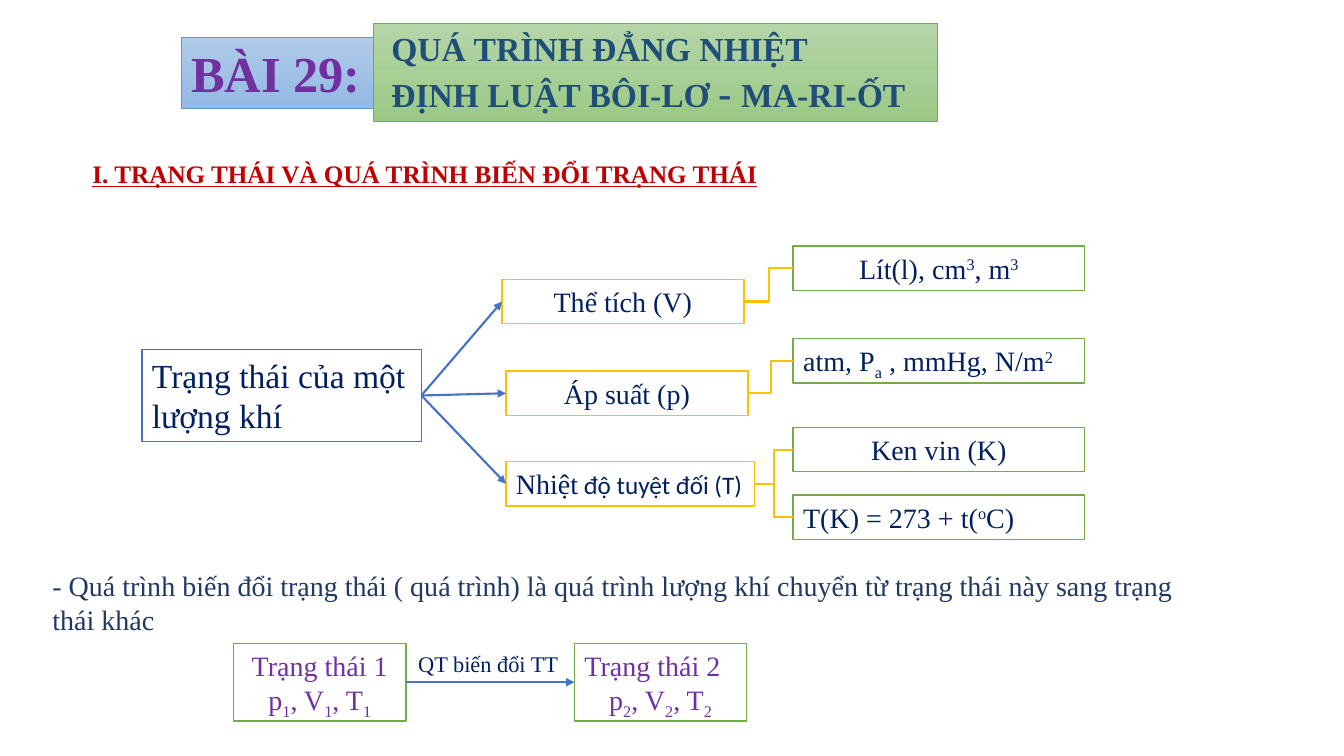
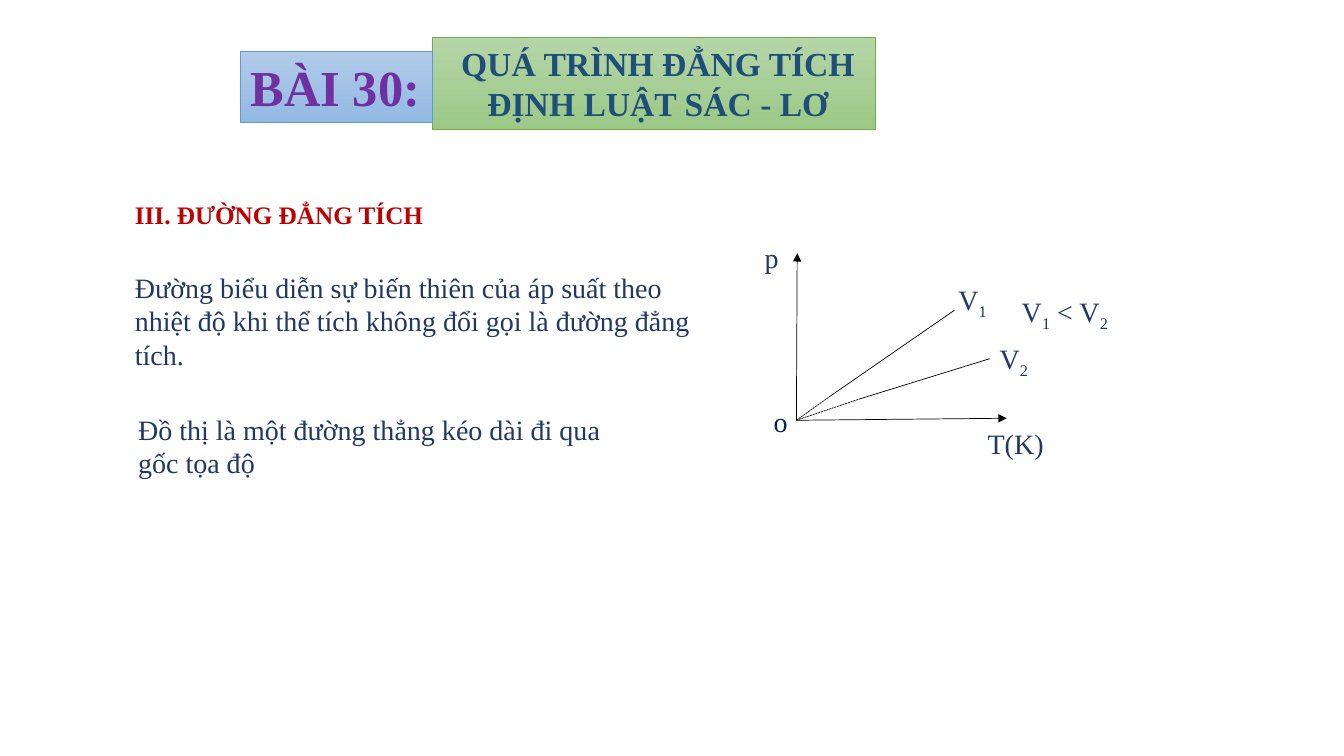
from lxml.etree import SubElement
from pptx import Presentation
from pptx.dml.color import RGBColor
from pptx.enum.dml import MSO_LINE
from pptx.enum.shapes import MSO_CONNECTOR as CONNECTOR, MSO_SHAPE as SHAPE
from pptx.enum.text import MSO_ANCHOR as ANCHOR, MSO_AUTO_SIZE as AUTO_SIZE, PP_ALIGN as ALIGN
from pptx.oxml.ns import qn
from pptx.util import Cm, Pt

NAVY, DARK_BLUE, PURPLE, RED = "002060", "203864", "7030A0", "C00000"
BLUE, GOLD, GREEN, BLACK, WHITE = "4472C4", "FFC000", "70AD47", "000000", "FFFFFF"
TOP, LEFT, BOTTOM, RIGHT = range(4)
ALIGNMENTS = {"l": ALIGN.LEFT, "c": ALIGN.CENTER}
BASELINES = {"_": "-25000", "^": "30000"}


def color(hex_string):
    return RGBColor.from_string(hex_string)


def split_scripts(text):
    """Yield (text, marker); "_" lowers and "^" raises the next character."""
    first, *others = text.replace("_", "|_").replace("^", "|^").split("|")
    yield first, None
    for part in others:
        yield part[1], part[0]
        yield part[2:], None


class Lesson:
    """Holds the style of the lesson and the slide being built."""

    BODY = {"name": "Times New Roman", "size": Pt(20), "bold": False, "underline": False}
    TITLE = {"size": Pt(24), "bold": True}
    BADGE = {"size": Pt(36), "bold": True}
    SECTION = {"size": Pt(18), "bold": True}
    BADGE_WIDTH, BADGE_HEIGHT, BADGE_DROP = 4.83, 1.8, 0.35

    def __init__(self):
        self.presentation = Presentation()
        self.presentation.slide_width = Cm(33.87)
        self.presentation.slide_height = Cm(19.05)
        self.slide = None

    def new_slide(self):
        self.slide = self.presentation.slides.add_slide(self.presentation.slide_layouts[5])

    def set_text(self, shape, paragraphs, ink, align="l", wrap=True, **changes):
        """Fill the shape; a paragraph is a string or a list of (text, changes)."""
        frame = shape.text_frame
        values = {"word_wrap": wrap, "auto_size": AUTO_SIZE.NONE, "vertical_anchor": ANCHOR.TOP,
                  "margin_left": Cm(0.25), "margin_right": Cm(0.25),
                  "margin_top": Cm(0.13), "margin_bottom": Cm(0.13)}
        for name, value in values.items():
            setattr(frame, name, value)
        for index, content in enumerate(paragraphs):
            paragraph = frame.add_paragraph() if index else frame.paragraphs[0]
            paragraph.alignment = ALIGNMENTS[align[min(index, len(align) - 1)]]
            paragraph.line_spacing = 1.0
            paragraph.space_before = Pt(0)
            pieces = [(content, {})] if isinstance(content, str) else content
            for text, piece_changes in pieces:
                for part, marker in split_scripts(text):
                    if part:
                        self.add_run(paragraph, part, marker, ink, {**changes, **piece_changes})

    def add_run(self, paragraph, text, marker, ink, changes):
        run = paragraph.add_run()
        run.text = text
        for name, value in {**self.BODY, **changes}.items():
            setattr(run.font, name, value)
        run.font.color.rgb = color(ink)
        if marker:
            run.font._element.set("baseline", BASELINES[marker])

    def outline(self, shape, line_color, width):
        shape.line.color.rgb = color(line_color)
        shape.line.width = Pt(width)

    def gradient(self, shape, colors, line_color):
        shape.fill.gradient()
        shape.fill.gradient_angle = 270
        for stop, stop_color in zip(shape.fill.gradient_stops, colors):
            stop.color.rgb = color(stop_color)
        self.outline(shape, line_color, 0.5)

    def rectangle(self, left, top, width, height):
        shape = self.slide.shapes.add_shape(
            SHAPE.RECTANGLE, Cm(left), Cm(top), Cm(width), Cm(height))
        shape.shadow.inherit = False
        return shape

    def box(self, left, top, width, height, paragraphs, line_color, ink=NAVY, **options):
        shape = self.rectangle(left, top, width, height)
        shape.fill.solid()
        shape.fill.fore_color.rgb = color(WHITE)
        self.outline(shape, line_color, 1)
        self.set_text(shape, paragraphs, ink, **options)
        return shape

    def text(self, left, top, width, height, content, ink=DARK_BLUE, **options):
        shape = self.slide.shapes.add_textbox(Cm(left), Cm(top), Cm(width), Cm(height))
        self.set_text(shape, [content], ink, **options)

    def header(self, lesson, title_lines, left, top, width, height, align):
        """Set the slide title with the lesson number badge at its left."""
        title = self.slide.shapes.title
        place = {"left": left, "top": top, "width": width, "height": height}
        for name, value in place.items():
            setattr(title, name, Cm(value))
        self.gradient(title, ("B5D5A7", "9CC987"), GREEN)
        self.set_text(title, title_lines, "1F4E79", align, **self.TITLE)
        badge = self.rectangle(left - self.BADGE_WIDTH, top + self.BADGE_DROP,
                               self.BADGE_WIDTH, self.BADGE_HEIGHT)
        self.gradient(badge, ("B1CBE9", "93B9E4"), "5B9BD5")
        self.set_text(badge, [lesson], PURPLE, **self.BADGE)

    def section(self, left, top, width, content, **options):
        self.text(left, top, width, 1.02, content, RED, **self.SECTION, **options)

    def line(self, start, end, line_color=BLACK, width=0.5, arrow=False, dash=None,
             kind=CONNECTOR.STRAIGHT):
        points = [Cm(value) for value in (*start, *end)]
        connector = self.slide.shapes.add_connector(kind, *points)
        self.outline(connector, line_color, width)
        if dash:
            connector.line.dash_style = dash
        if arrow:
            SubElement(connector.line._get_or_add_ln(), qn("a:tailEnd"), type="triangle")
        SubElement(connector._element.spPr, qn("a:effectLst"))
        return connector

    def join(self, source, target, line_color, **options):
        """Connect the right side of one box to the left side of another."""
        connector = self.line((0, 0), (0, 0), line_color, 1.5, **options)
        connector.begin_connect(source, RIGHT)
        connector.end_connect(target, LEFT)


def build_states_slide(lesson):
    lesson.new_slide()
    lesson.header("BÀI 29:",
                  [" QUÁ TRÌNH ĐẲNG NHIỆT",
                   [(" ĐỊNH LUẬT BÔI-LƠ ", {}), ("- ", {"size": Pt(28)}), ("MA-RI-ỐT", {})]],
                  9.4, 0.58, 14.22, 2.49, "l")
    lesson.section(2.08, 3.86, 17.42, "I. TRẠNG THÁI VÀ QUÁ TRÌNH BIẾN ĐỔI TRẠNG THÁI",
                   wrap=False, underline=True)

    state = lesson.box(3.58, 8.81, 7.04, 2.31, ["Trạng thái của một lượng khí"], BLUE,
                       size=Pt(24))
    temperature = [("Nhiệt", {}), (" độ tuyệt đối (T)", {"name": "Calibri", "size": Pt(18)})]
    quantities = [
        (12.65, 7.04, 6.1, "Thể tích (V)", "c", [(6.2, "Lít(l), cm^3, m^3", "c")]),
        (12.75, 9.35, 6.1, "Áp suất (p)", "c", [(8.53, "atm, P_a , mmHg, N/m^2", "l")]),
        (12.75, 11.63, 6.27, temperature, "l",
         [(10.77, "Ken vin (K)", "c"), (12.47, "T(K) = 273 + t(^oC)", "l")]),
    ]
    for left, top, width, name, align, units in quantities:
        quantity = lesson.box(left, top, width, 1.12, [name], GOLD, align=align)
        lesson.join(state, quantity, BLUE, arrow=True)
        for unit_top, unit_text, unit_align in units:
            unit = lesson.box(19.99, unit_top, 7.34, 1.12, [unit_text], GREEN, align=unit_align)
            lesson.join(quantity, unit, GOLD, kind=CONNECTOR.ELBOW)

    lesson.text(1.07, 14.2, 29.62, 1.96,
                "- Quá trình biến đổi trạng thái ( quá trình) là quá trình lượng khí "
                "chuyển từ trạng thái này sang trạng thái khác")
    before, after = [
        lesson.box(left, 16.21, 4.34, 1.96,
                   [f"Trạng thái {number}", f"p_{number}, V_{number}, T_{number}"],
                   GREEN, PURPLE, align=align)
        for number, left, align in ((1, 5.89, "c"), (2, 14.48, "lc"))]
    lesson.join(before, after, BLUE, arrow=True)
    lesson.text(10.29, 16.26, 4.19, 0.94, "QT biến đổi TT", NAVY, size=Pt(16))


def build_isochore_slide(lesson):
    lesson.new_slide()
    lesson.header("BÀI 30:", [" QUÁ TRÌNH ĐẲNG TÍCH", " ĐỊNH LUẬT SÁC - LƠ"],
                  10.9, 0.94, 11.15, 2.31, "c")
    lesson.section(3.15, 4.9, 7.77, "III. ĐƯỜNG ĐẲNG TÍCH")
    lesson.text(3.15, 6.68, 14.86, 2.82,
                "Đường biểu diễn sự biến thiên của áp suất theo nhiệt độ khi thể tích "
                "không đổi gọi là đường đẳng tích.")
    lesson.text(3.23, 10.26, 12.83, 1.96,
                "Đồ thị là một đường thẳng kéo dài đi qua gốc tọa độ")

    origin = (20.07, 10.59)
    for axis_end in ((25.37, 10.54), (20.09, 6.38)):
        lesson.line(origin, axis_end, arrow=True)
    for bend, curve_end in (((20.94, 9.97), (24.05, 7.82)), ((21.64, 10.06), (24.94, 9.04))):
        lesson.line(origin, bend, dash=MSO_LINE.SQUARE_DOT)
        lesson.line(bend, curve_end)
    labels = [
        (23.9, 6.99, 1.47, "V_1", DARK_BLUE),
        (24.94, 8.48, 1.5, "V_2", DARK_BLUE),
        (25.5, 7.29, 2.79, "V_1 < V_2", DARK_BLUE),
        (19.25, 10.06, 0.94, "o", NAVY),
        (19.02, 5.94, 0.76, "p", DARK_BLUE),
        (24.64, 10.62, 2.34, "T(K)", DARK_BLUE),
    ]
    for left, top, width, content, ink in labels:
        lesson.text(left, top, width, 1.12, content, ink)


def main():
    lesson = Lesson()
    build_states_slide(lesson)
    build_isochore_slide(lesson)
    lesson.presentation.save("out.pptx")


if __name__ == "__main__":
    main()
